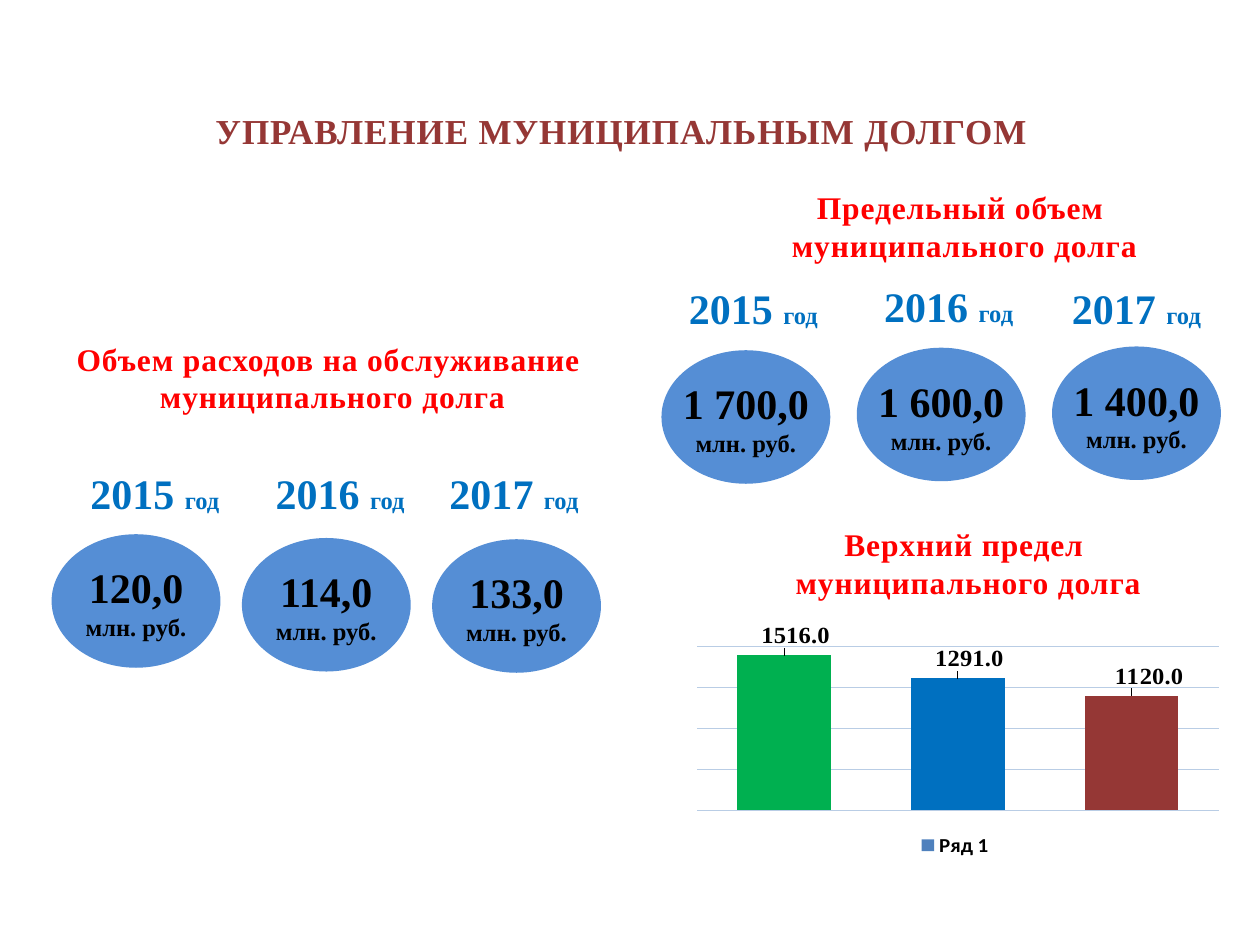
"""Builds a slide on municipal debt management with yearly figures and a column chart."""
from dataclasses import dataclass

from lxml import etree
from pptx import Presentation
from pptx.chart.data import CategoryChartData
from pptx.dml.color import RGBColor
from pptx.enum.chart import XL_CHART_TYPE, XL_LABEL_POSITION, XL_LEGEND_POSITION
from pptx.enum.shapes import MSO_SHAPE
from pptx.enum.text import MSO_ANCHOR, PP_ALIGN
from pptx.oxml.ns import qn
from pptx.util import Inches, Pt

CENTER = PP_ALIGN.CENTER
MIDDLE = MSO_ANCHOR.MIDDLE
ELLIPSE = MSO_SHAPE.OVAL
COLUMN = XL_CHART_TYPE.COLUMN_CLUSTERED
OUTSIDE_END = XL_LABEL_POSITION.OUTSIDE_END
BOTTOM = XL_LEGEND_POSITION.BOTTOM

SERIF = "Times New Roman"
BLACK, RED, BLUE, BROWN = "000000", "FF0000", "0070C0", "953735"
OVAL_BLUE, SERIES_BLUE, GRID_BLUE, GREEN = "558ED5", "4F81BD", "B9CDE5", "00B050"


@dataclass
class Heading:
    lines: tuple[str, ...]
    left: float
    top: float
    width: float


@dataclass
class YearFigure:
    year: str
    amount: str
    year_left: float
    year_top: float
    oval_left: float
    oval_top: float


@dataclass
class Column:
    category: str
    value: float
    color: str
    label_shift: float


HEADINGS = [
    Heading(("Предельный объем ", "муниципального долга"), 6.04, 1.46, 3.23),
    Heading(("Объем расходов на обслуживание ", "муниципального долга"), 0.48, 2.66, 4.32),
    Heading(("Верхний предел ", "муниципального долга"), 6.07, 4.13, 3.23),
]
YEAR_FIGURES = [
    YearFigure("2015", "1 700,0", 5.36, 2.19, 5.25, 2.78),
    YearFigure("2016", "1 600,0", 6.91, 2.18, 6.8, 2.76),
    YearFigure("2017", "1 400,0", 8.4, 2.19, 8.35, 2.75),
    YearFigure("2015", "120,0", 0.61, 3.66, 0.41, 4.24),
    YearFigure("2016", "114,0", 2.08, 3.66, 1.92, 4.27),
    YearFigure("2017", "133,0", 3.46, 3.66, 3.43, 4.28),
]
COLUMNS = [
    Column("1", 1516, GREEN, 0.02),
    Column("2", 1291, BLUE, 0.02),
    Column("3", 1120, BROWN, 0.03),
]


def rgb(color: str) -> RGBColor:
    return RGBColor.from_string(color)


def format_font(font, size: float, color: str, name: str = SERIF) -> None:
    font.name = name
    font.size = Pt(size)
    font.bold = True
    font.color.rgb = rgb(color)


def place(shape, left: float, top: float, width: float, height: float) -> None:
    shape.left, shape.top = Inches(left), Inches(top)
    shape.width, shape.height = Inches(width), Inches(height)


def add_text_box(shapes, left: float, top: float, width: float, height: float, wrap: bool = True):
    text_box = shapes.add_textbox(Inches(left), Inches(top), Inches(width), Inches(height))
    text_box.text_frame.word_wrap = wrap
    return text_box.text_frame


def fill_spaced_lines(text_frame, lines: tuple[str, ...], size: float, color: str) -> None:
    text_frame.vertical_anchor = MIDDLE
    text_frame.text = "\n".join(lines)
    for paragraph in text_frame.paragraphs:
        paragraph.alignment = CENTER
        format_font(paragraph.font, size, color)
        for run in paragraph.runs:
            run.font._element.set("spc", "50")


def add_title(slide) -> None:
    title = slide.shapes.title
    place(title, 1.37, 0.7, 7.12, 0.67)
    fill_spaced_lines(title.text_frame, ("УПРАВЛЕНИЕ МУНИЦИПАЛЬНЫМ ДОЛГОМ",), 20, BROWN)


def add_heading(slide, heading: Heading) -> None:
    text_frame = add_text_box(slide.shapes, heading.left, heading.top, heading.width, 0.67)
    fill_spaced_lines(text_frame, heading.lines, 18, RED)


def add_year(slide, figure: YearFigure) -> None:
    text_frame = add_text_box(slide.shapes, figure.year_left, figure.year_top, 1.24, 0.5, wrap=False)
    paragraph = text_frame.paragraphs[0]
    paragraph.alignment = CENTER
    for text, size in ((f"{figure.year} ", 24), ("год", 14)):
        run = paragraph.add_run()
        run.text = text
        format_font(run.font, size, BLUE)


def add_amount(slide, figure: YearFigure) -> None:
    group = slide.shapes.add_group_shape()
    oval = group.shapes.add_shape(
        ELLIPSE, Inches(figure.oval_left), Inches(figure.oval_top), Inches(1.34), Inches(1.06)
    )
    oval.shadow.inherit = False
    oval.fill.solid()
    oval.fill.fore_color.rgb = rgb(OVAL_BLUE)
    oval.line.fill.background()
    text_frame = add_text_box(group.shapes, figure.oval_left, figure.oval_top + 0.17, 1.34, 0.74)
    text_frame.text = f"{figure.amount}\nмлн. руб."
    for paragraph, size in zip(text_frame.paragraphs, (24, 14)):
        paragraph.alignment = CENTER
        format_font(paragraph.font, size, BLACK)


def insert_layout(parent, index: int, settings: dict[str, str]) -> None:
    for old_layout in parent.findall(qn("c:layout")):
        parent.remove(old_layout)
    layout = etree.Element(qn("c:layout"))
    manual = etree.SubElement(layout, qn("c:manualLayout"))
    for name, value in settings.items():
        etree.SubElement(manual, qn(f"c:{name}")).set("val", value)
    parent.insert(index, layout)


def format_columns(plot) -> None:
    plot.gap_width = 86
    plot.vary_by_categories = False
    series = plot.series[0]
    series.format.fill.solid()
    series.format.fill.fore_color.rgb = rgb(SERIES_BLUE)
    labels = series.data_labels
    labels.show_value = True
    labels.number_format = "0.0"
    labels.number_format_is_linked = False
    labels.position = OUTSIDE_END
    format_font(labels.font, 14, BLACK)
    for index, column in enumerate(COLUMNS):
        point = series.points[index]
        point.format.fill.solid()
        point.format.fill.fore_color.rgb = rgb(column.color)
        format_font(point.data_label.font, 14, BLACK)
        point.data_label.position = OUTSIDE_END
    for label, column in zip(labels._element.findall(qn("c:dLbl")), COLUMNS):
        insert_layout(label, 1, {"x": str(column.label_shift), "y": "-0.01"})


def add_debt_chart(slide) -> None:
    chart_data = CategoryChartData(number_format="0.0")
    chart_data.categories = [column.category for column in COLUMNS]
    chart_data.add_series("Ряд 1", [column.value for column in COLUMNS])
    chart = slide.shapes.add_chart(
        COLUMN, Inches(5.28), Inches(4.94), Inches(4.6), Inches(1.9), chart_data
    ).chart
    format_font(chart.font, 12, BLACK, "Calibri")
    chart.has_title = False
    chart.has_legend = True
    chart.legend.position = BOTTOM
    chart.legend.include_in_layout = False
    chart.category_axis.visible = False
    value_axis = chart.value_axis
    value_axis.visible = False
    value_axis.minimum_scale, value_axis.maximum_scale = 0, 1600
    value_axis.major_unit = 400
    value_axis.has_major_gridlines = True
    grid_line = value_axis.major_gridlines.format.line
    grid_line.color.rgb = rgb(GRID_BLUE)
    grid_line.width = Pt(0.75)
    format_columns(chart.plots[0])
    plot_area = chart._chartSpace.find(f".//{qn('c:plotArea')}")
    insert_layout(plot_area, 0, {
        "layoutTarget": "inner", "xMode": "edge", "yMode": "edge",
        "x": "0.055", "y": "0.045", "w": "0.9", "h": "0.727",
    })


def main() -> None:
    presentation = Presentation()
    presentation.slide_width, presentation.slide_height = Inches(10), Inches(7.5)
    slide = presentation.slides.add_slide(presentation.slide_layouts[5])
    add_title(slide)
    for heading in HEADINGS:
        add_heading(slide, heading)
    for figure in YEAR_FIGURES:
        add_year(slide, figure)
        add_amount(slide, figure)
    add_debt_chart(slide)
    presentation.save("out.pptx")


if __name__ == "__main__":
    main()
